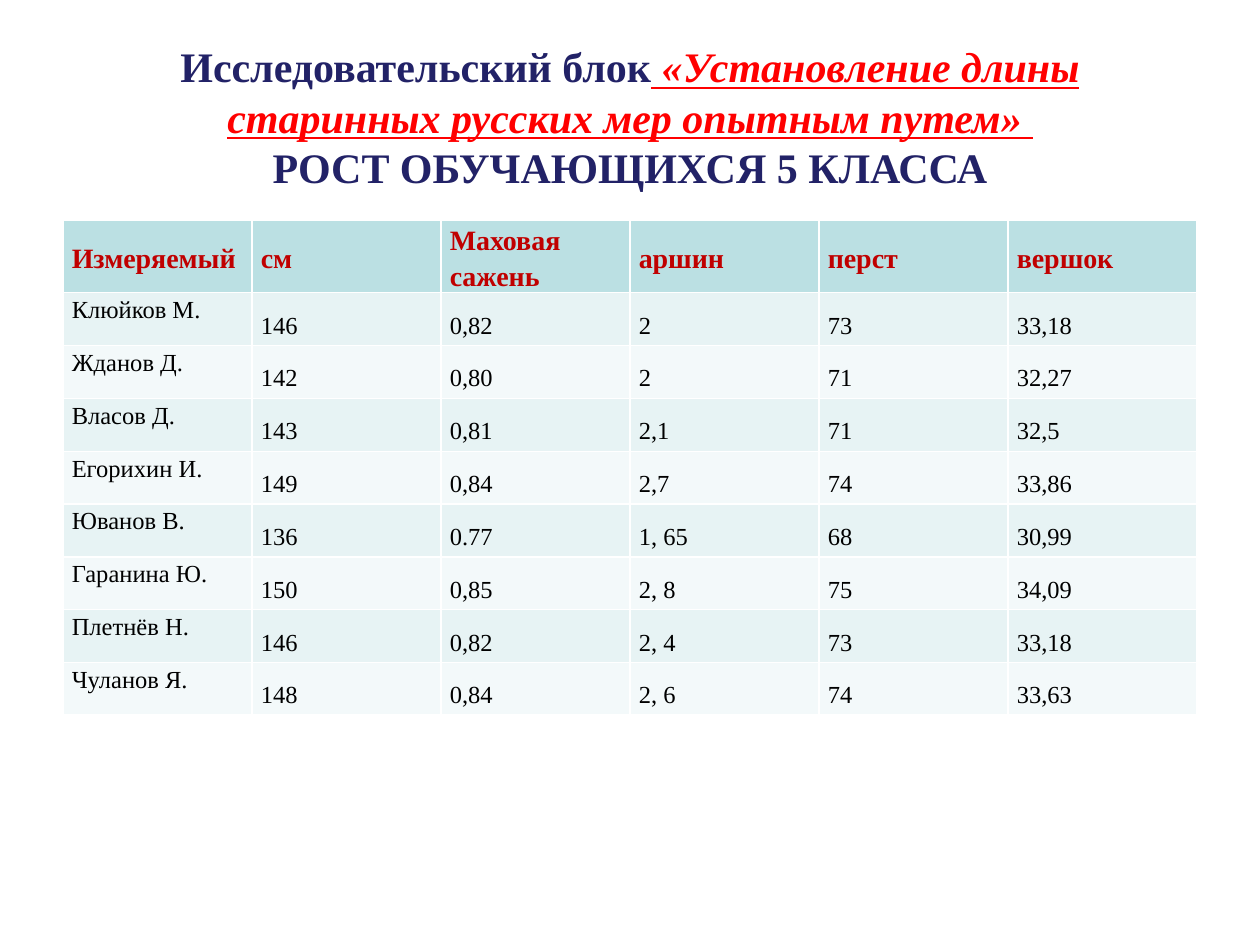
import copy
import pptx
import pptx.util
import pptx.dml.color
import pptx.enum.text

Align = pptx.enum.text.PP_ALIGN
Anchor = pptx.enum.text.MSO_ANCHOR

HEAD = ["Измеряемый", "см", "Маховая сажень", "аршин", "перст", "вершок"]
ROWS = [
    ["Клюйков М.", "146", "0,82", "2", "73", "33,18"],
    ["Жданов Д.", "142", "0,80", "2", "71", "32,27"],
    ["Власов Д.", "143", "0,81", "2,1", "71", "32,5"],
    ["Егорихин И.", "149", "0,84", "2,7", "74", "33,86"],
    ["Юванов В.", "136", "0.77", "1, 65", "68", "30,99"],
    ["Гаранина Ю.", "150", "0,85", "2, 8", "75", "34,09"],
    ["Плетнёв Н.", "146", "0,82", "2, 4", "73", "33,18"],
    ["Чуланов Я.", "148", "0,84", "2, 6", "74", "33,63"],
]


def color(code):
    return pptx.dml.color.RGBColor.from_string(code)


class Deck:
    font = "Times New Roman"
    navy, red, wine, black = "222267", "FF0000", "C00000", "000000"
    teal, bands = "BBE0E3", ["E7F3F4", "F3F9FA"]

    def __init__(self, wide, high):
        self.file = pptx.Presentation()
        self.file.slide_width = pptx.util.Inches(wide)
        self.file.slide_height = pptx.util.Inches(high)
        self.slide = self.file.slides.add_slide(self.file.slide_layouts[5])

    def box(self, left, top, width, height):
        wide, high = self.file.slide_width, self.file.slide_height
        return [round(n) for n in (left * wide, top * high, width * wide, height * high)]

    def style(self, run, size, code, bold=False, accent=False):
        font = run.font
        font.name, font.size, font.bold = self.font, pptx.util.Pt(size), bold
        font.italic = font.underline = accent
        font.color.rgb = color(code)

    def title(self, area, lead, name, tail):
        shape = self.slide.shapes.title
        shape.left, shape.top, shape.width, shape.height = self.box(*area)
        frame = shape.text_frame
        frame.word_wrap = True
        frame.auto_size = pptx.enum.text.MSO_AUTO_SIZE.NONE
        frame.vertical_anchor = Anchor.MIDDLE
        para = frame.paragraphs[0]
        para.text = lead
        para.alignment = Align.CENTER
        para.add_run().text = name
        para.add_line_break()
        para.add_run().text = tail
        first, mid, last = para.runs
        self.style(first, 24, self.navy, True)
        self.style(mid, 24, self.red, True, True)
        self.style(last, 24, self.navy, True)
        line = last._r.getprevious()
        line.append(copy.deepcopy(mid._r.rPr))

    def cell(self, cell, text, fill, size, code, bold, space, anchor):
        cell.fill.solid()
        cell.fill.fore_color.rgb = color(fill)
        cell.margin_left = cell.margin_right = pptx.util.Inches(0.07)
        cell.margin_top = cell.margin_bottom = 0
        cell.vertical_anchor = anchor
        para = cell.text_frame.paragraphs[0]
        para.text = text
        para.alignment = Align.JUSTIFY
        para.line_spacing = space
        self.style(para.runs[0], size, code, bold)

    def table(self, area, head, rows, top):
        frame = self.slide.shapes.add_table(len(rows) + 1, len(head), *self.box(*area))
        grid = frame.table
        grid.rows[0].height = round(frame.height * top)
        for row in list(grid.rows)[1:]:
            row.height = round(frame.height * (1 - top) / len(rows))
        for col, text in enumerate(head):
            self.cell(grid.cell(0, col), text, self.teal, 16, self.wine, True, 1.15, Anchor.MIDDLE)
        for num, row in enumerate(rows):
            for col, text in enumerate(row):
                space, anchor = (1.5, Anchor.MIDDLE) if col else (1.15, Anchor.TOP)
                self.cell(grid.cell(num + 1, col), text, self.bands[num % 2],
                          14, self.black, False, space, anchor)


def main():
    deck = Deck(10, 7.5)
    deck.title((0.05, 0.04, 0.9, 1 / 6), "Исследовательский блок",
               " «Установление длины старинных русских мер опытным путем» ",
               "РОСТ ОБУЧАЮЩИХСЯ 5 КЛАССА")
    deck.table((0.05, 1.75 / 7.5, 0.9, 3.81 / 7.5), HEAD, ROWS, 0.15)
    deck.file.save("out.pptx")


if __name__ == "__main__":
    main()
